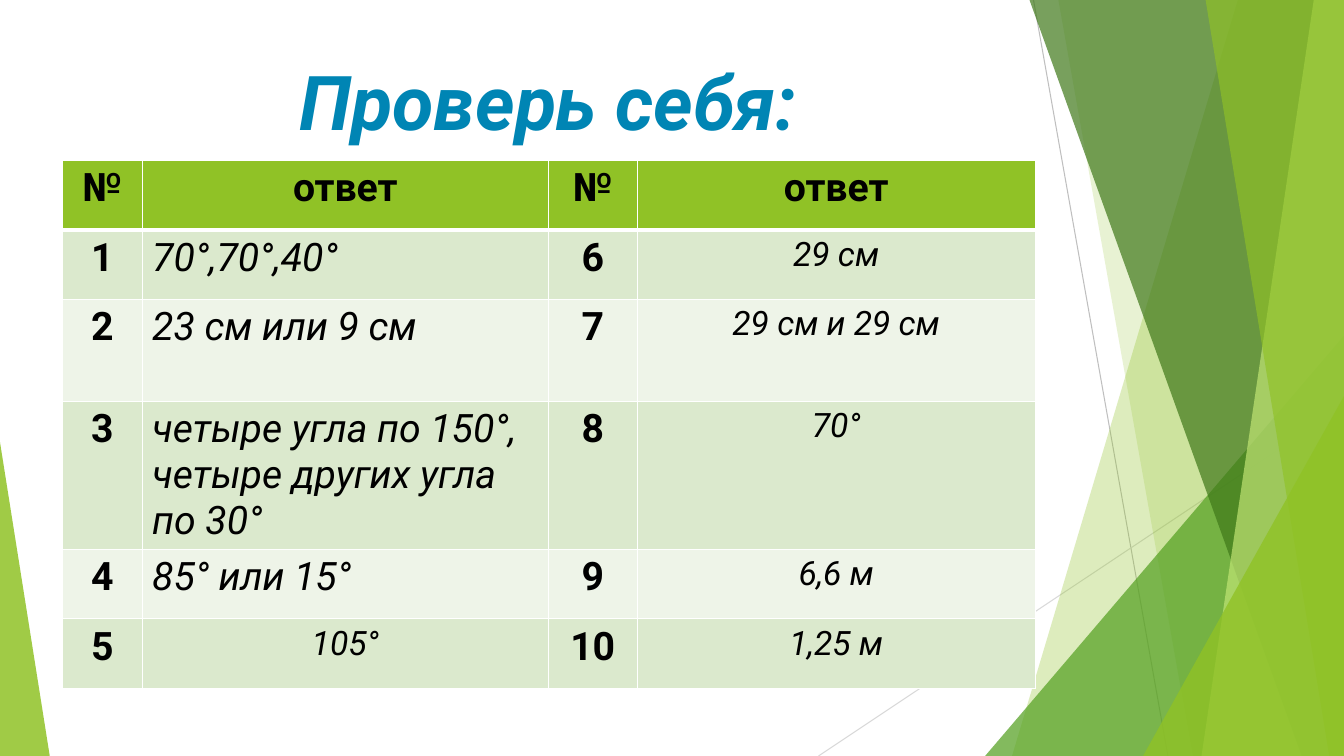
from dataclasses import dataclass

from lxml import etree
from pptx import Presentation, util as u
from pptx.dml import color
from pptx.enum import shapes, text
from pptx.oxml import ns

HUES = {
    "lime": "90C226", "leaf": "54A021", "pine": "3F7819", "pale": "C0E474",
    "gray": "BFBFBF", "mist": "D9D9D9", "blue": "0085B4", "black": "000000",
    "white": "FFFFFF", "odd": "DBE9CD", "even": "EEF4E8",
}
FONT = "Roboto"
WIDE, HIGH = u.Inches(13.33), u.Inches(7.5)


# Lengths below are percentages of the slide's width and height.
@dataclass
class Ray:
    x1: float
    y1: float
    x2: float
    y2: float
    hue: str


@dataclass
class Band:
    """Strip that reaches the right edge, with a slanted left side."""
    top: float
    foot: float
    hue: str
    alpha: int


@dataclass
class Peak:
    """Right triangle that stands on the bottom edge."""
    left: float
    top: float
    width: float
    apex: int
    hue: str
    alpha: int


RAYS = [Ray(76.9, 0, 86.9, 100, "gray"), Ray(100, 53.7, 60.9, 100, "mist")]
DECOR = [
    Band(92.1, 75.3, "lime", 30),
    Band(78.75, 88.75, "lime", 20),
    Peak(73.3, 44.4, 26.7, 1, "leaf", 72),
    Band(76.6, 96.85, "pine", 70),
    Band(97.75, 89.4, "pale", 70),
    Band(89.7, 98.9, "lime", 65),
    Peak(85.05, 52.4, 14.95, 1, "lime", 80),
    Peak(0, 58.5, 3.7, 0, "lime", 85),
]
COLS = [5.93, 30.23, 6.6, 29.63]
ROWS = [9.2, 9.2, 13.5, 19.56, 9.2, 9.2]
CELLS = [
    ["№", "ответ", "№", "ответ"],
    ["1", "70°,70°,40°", "6", "29 см"],
    ["2", "23 см или 9 см", "7", "29 см и 29 см"],
    ["3", "четыре угла по 150°, четыре других угла по 30°", "8", "70°"],
    ["4", "85° или 15°", "9", "6,6 м"],
    ["5", "105°", "10", "1,25 м"],
]
HEAD = {"size": u.Pt(28), "bold": True, "italic": False}
LONG = {"size": u.Pt(28), "bold": False, "italic": True}
SHORT = {"size": u.Pt(24), "bold": False, "italic": True}
TITLE = {"size": u.Pt(54), "bold": True, "italic": True}


def across(part: float) -> int:
    return round(WIDE * part / 100)


def down(part: float) -> int:
    return round(HIGH * part / 100)


def rgb(hue: str) -> color.RGBColor:
    return color.RGBColor.from_string(HUES[hue])


def add(parent, tag: str, **attrs: str):
    return etree.SubElement(parent, ns.qn(tag), attrs)


def write(frame, words: str, style: dict, hue: str, align) -> None:
    para = frame.paragraphs[0]
    para.alignment = align
    run = para.add_run()
    run.text = words
    for name, value in {"name": FONT, **style}.items():
        setattr(run.font, name, value)
    run.font.color.rgb = rgb(hue)


def draw_ray(slide, ray: Ray) -> None:
    line = slide.shapes.add_connector(
        shapes.MSO_CONNECTOR.STRAIGHT,
        across(ray.x1), down(ray.y1), across(ray.x2), down(ray.y2))
    line.line.width = u.Pt(0.75)
    line.line.color.rgb = rgb(ray.hue)
    add(line._element.spPr, "a:effectLst")


def draw_decor(slide, item: Band | Peak) -> None:
    if isinstance(item, Band):
        form = slide.shapes.build_freeform(across(item.top), 0)
        form.add_line_segments(
            [(WIDE, 0), (WIDE, HIGH), (across(item.foot), HIGH)], close=True)
        shape = form.convert_to_shape()
    else:
        shape = slide.shapes.add_shape(
            shapes.MSO_SHAPE.ISOSCELES_TRIANGLE, across(item.left),
            down(item.top), across(item.width), down(100 - item.top))
        shape.adjustments[0] = item.apex
    shape.shadow.inherit = False
    shape.line.fill.background()
    shape.fill.solid()
    shape.fill.fore_color.rgb = rgb(item.hue)
    tone = shape._element.spPr.find(".//" + ns.qn("a:srgbClr"))
    add(tone, "a:alpha", val=str(item.alpha * 1000))


def edge(cell, foot: float) -> None:
    """Put white borders on a cell, the lower one foot points wide."""
    props = cell._tc.get_or_add_tcPr()
    sides = {"a:lnL": 1, "a:lnR": 1, "a:lnT": 1, "a:lnB": foot}
    for spot, (tag, width) in enumerate(sides.items()):
        line = add(props, tag, w=str(u.Pt(width)))
        add(add(line, "a:solidFill"), "a:srgbClr", val=HUES["white"])
        props.insert(spot, line)


def draw_table(slide) -> None:
    table = slide.shapes.add_table(
        len(ROWS), len(COLS), across(4.65), down(21.2),
        across(sum(COLS)), down(sum(ROWS))).table
    for col, width in zip(table.columns, COLS):
        col.width = across(width)
    for row, height in zip(table.rows, ROWS):
        row.height = down(height)
    for r, row in enumerate(CELLS):
        hue = "lime" if r == 0 else "odd" if r % 2 else "even"
        for c, words in enumerate(row):
            cell = table.cell(r, c)
            cell.fill.solid()
            cell.fill.fore_color.rgb = rgb(hue)
            edge(cell, 3 if r == 0 else 1)
            long = c == 1 and 0 < r < len(CELLS) - 1
            style = HEAD if r == 0 or c % 2 == 0 else LONG if long else SHORT
            align = text.PP_ALIGN.LEFT if long else text.PP_ALIGN.CENTER
            write(cell.text_frame, words, style, "black", align)


def draw_title(slide) -> None:
    title = slide.shapes.title
    place = {"left": across(5.55), "top": down(5.87),
             "width": across(70.5), "height": down(19.2)}
    for name, value in place.items():
        setattr(title, name, value)
    frame = title.text_frame
    form = {"vertical_anchor": text.MSO_ANCHOR.TOP, "word_wrap": True,
            "auto_size": text.MSO_AUTO_SIZE.NONE, "margin_top": u.Inches(0.1)}
    for name, value in form.items():
        setattr(frame, name, value)
    write(frame, "Проверь себя:", TITLE, "blue", text.PP_ALIGN.CENTER)


def main() -> None:
    deck = Presentation()
    deck.slide_width, deck.slide_height = WIDE, HIGH
    slide = deck.slides.add_slide(deck.slide_layouts[5])
    for ray in RAYS:
        draw_ray(slide, ray)
    for item in DECOR:
        draw_decor(slide, item)
    draw_title(slide)
    draw_table(slide)
    deck.save("out.pptx")


if __name__ == "__main__":
    main()
